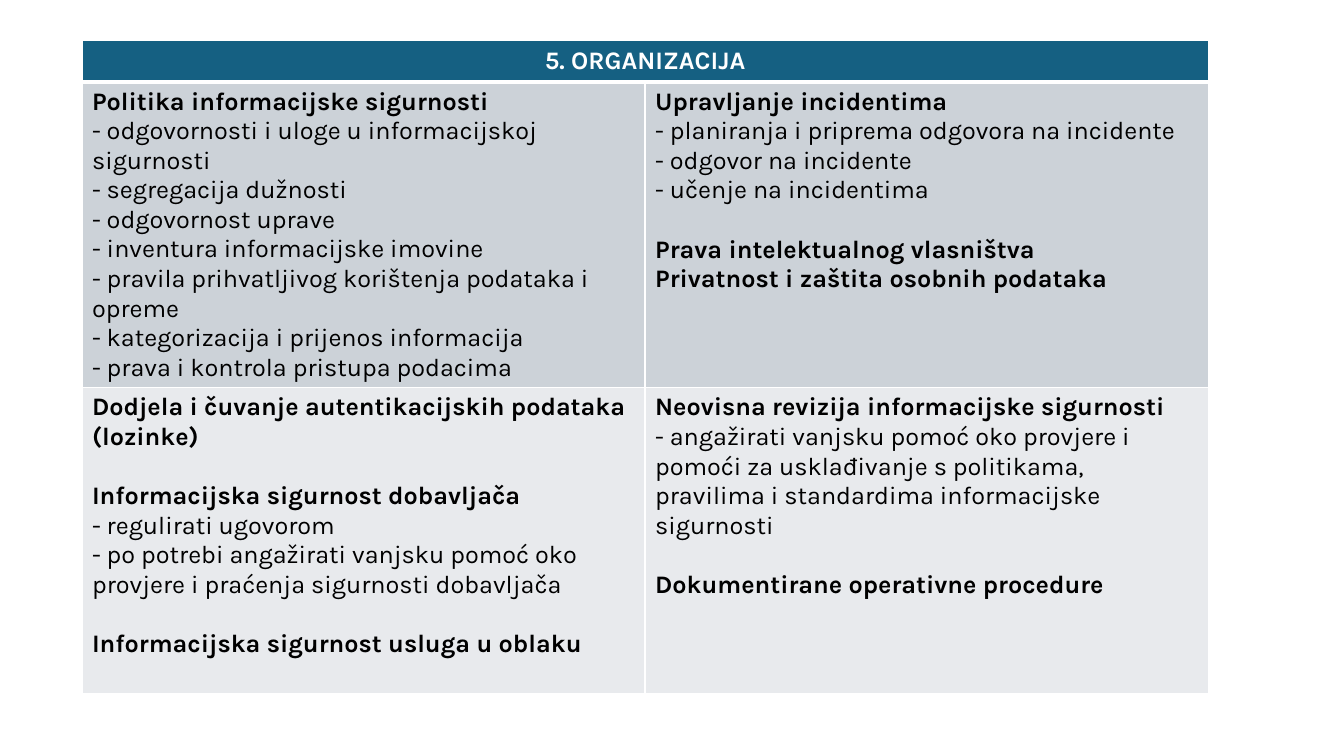
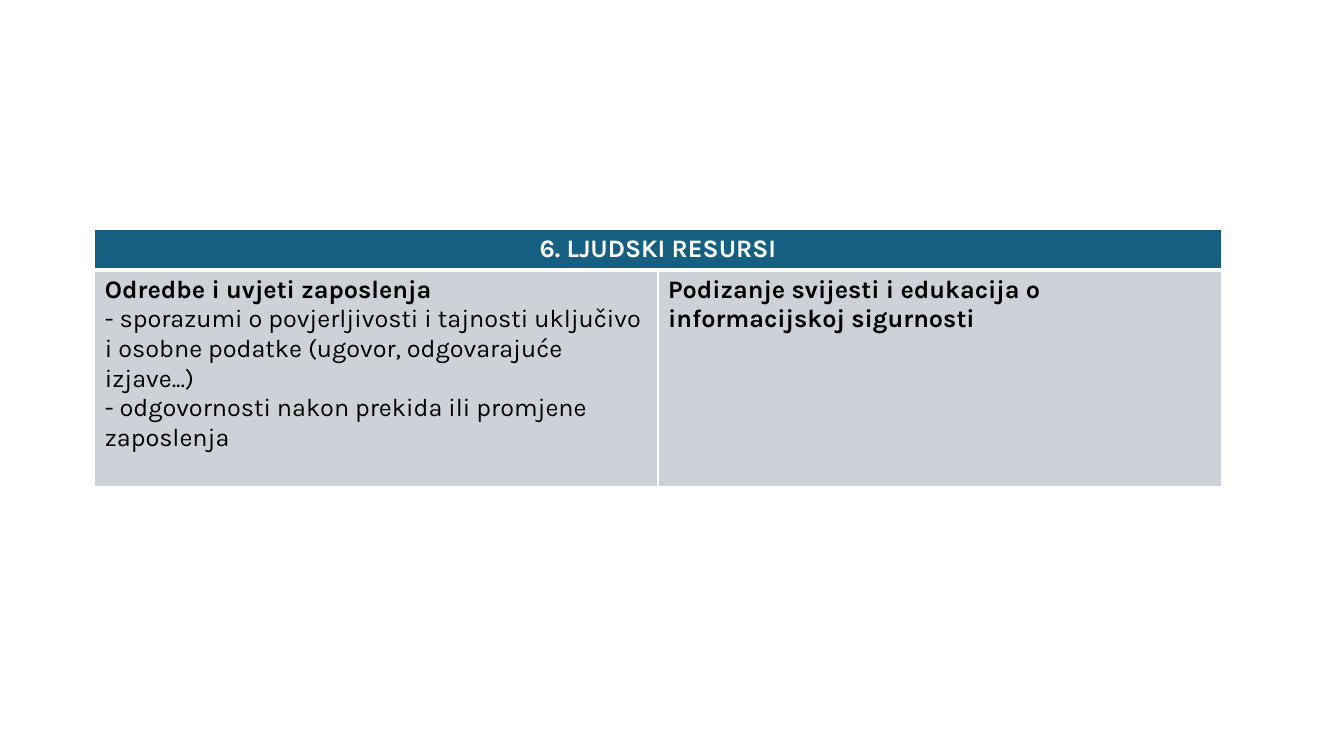
from dataclasses import dataclass

from lxml.etree import SubElement as Sub
from pptx import Presentation
from pptx.dml.color import RGBColor as Color
from pptx.enum.text import PP_ALIGN as Align
from pptx.oxml.ns import qn
from pptx.util import Inches, Pt


@dataclass(frozen=True)
class Theme:
    font: str = "Karla"
    size: float = 18
    group_gap: float = 21.2
    header_fill: str = "156082"
    row_fills: tuple = ("CCD2D8", "E8EAED")
    light: str = "FFFFFF"
    dark: str = "000000"
    thin: float = 1
    thick: float = 3
    table_columns: float = 83.8
    header_rows: float = 5.44


class Deck:
    grid = 100

    def __init__(self, theme):
        self.theme = theme
        self.presentation = Presentation()
        self.presentation.slide_width = Inches(13.33)
        self.presentation.slide_height = Inches(7.5)
        self.slide = None

    def columns(self, count):
        return round(self.presentation.slide_width * count / self.grid)

    def rows(self, count):
        return round(self.presentation.slide_height * count / self.grid)

    def add_slide(self):
        layout = self.presentation.slide_layouts[6]
        self.slide = self.presentation.slides.add_slide(layout)

    def add_text(self, paragraph, text, color, bold):
        run = paragraph.add_run()
        run.text = text
        font_format = {"name": self.theme.font, "size": Pt(self.theme.size), "bold": bold}
        for name, value in font_format.items():
            setattr(run.font, name, value)
        run.font.color.rgb = Color.from_string(color)

    def paint(self, cell, fill, top, bottom):
        thin = self.theme.thin
        properties = cell._tc.get_or_add_tcPr()
        widths = {"a:lnL": thin, "a:lnR": thin, "a:lnT": top, "a:lnB": bottom}
        for tag, width in widths.items():
            line = Sub(properties, qn(tag), w=str(Pt(width)))
            solid = Sub(line, qn("a:solidFill"))
            Sub(solid, qn("a:srgbClr"), val=self.theme.light)
        cell.fill.solid()
        cell.fill.fore_color.rgb = Color.from_string(fill)

    def fill_header(self, table, title):
        for cell in table.rows[0].cells:
            self.paint(cell, self.theme.header_fill, self.theme.thin, self.theme.thick)
        header = table.cell(0, 0)
        header.merge(table.cell(0, len(table.columns) - 1))
        paragraph = header.text_frame.paragraphs[0]
        paragraph.alignment = Align.CENTER
        self.add_text(paragraph, title, self.theme.light, True)

    def fill_body(self, cell, groups):
        frame = cell.text_frame
        paragraph = frame.paragraphs[0]
        for group_index, group in enumerate(groups):
            for line_index, text in enumerate(group):
                if group_index or line_index:
                    paragraph = frame.add_paragraph()
                if group_index and not line_index:
                    paragraph.space_before = Pt(self.theme.group_gap)
                self.add_text(paragraph, text, self.theme.dark, not text.startswith("-"))

    def add_table(self, left, top, body_rows, title, body):
        theme = self.theme
        column_count = len(body[0])
        heights = [theme.header_rows] + [body_rows] * len(body)
        table = self.slide.shapes.add_table(
            len(heights), column_count, self.columns(left), self.rows(top),
            self.columns(theme.table_columns), self.rows(sum(heights))).table
        table.horz_banding = False
        for column in table.columns:
            column.width = self.columns(theme.table_columns / column_count)
        for row, height in zip(table.rows, heights):
            row.height = self.rows(height)
        self.fill_header(table, title)
        for row_index, contents in enumerate(body, start=1):
            fill = theme.row_fills[(row_index - 1) % len(theme.row_fills)]
            top_line = theme.thick if row_index == 1 else theme.thin
            for cell, groups in zip(table.rows[row_index].cells, contents):
                self.paint(cell, fill, top_line, theme.thin)
                self.fill_body(cell, groups)


ORGANISATION = [
    [
        [["Politika informacijske sigurnosti",
          "- odgovornosti i uloge u informacijskoj sigurnosti",
          "- segregacija dužnosti",
          "- odgovornost uprave",
          "- inventura informacijske imovine",
          "- pravila prihvatljivog korištenja podataka i opreme",
          "- kategorizacija i prijenos informacija",
          "- prava i kontrola pristupa podacima"]],
        [["Upravljanje incidentima",
          "- planiranja i priprema odgovora na incidente",
          "- odgovor na incidente",
          "- učenje na incidentima"],
         ["Prava intelektualnog vlasništva",
          "Privatnost i zaštita osobnih podataka"]],
    ],
    [
        [["Dodjela i čuvanje autentikacijskih podataka (lozinke)"],
         ["Informacijska sigurnost dobavljača",
          "- regulirati ugovorom",
          "- po potrebi angažirati vanjsku pomoć oko provjere i praćenja "
          "sigurnosti dobavljača"],
         ["Informacijska sigurnost usluga u oblaku"]],
        [["Neovisna revizija informacijske sigurnosti",
          "- angažirati vanjsku pomoć oko provjere i pomoći za usklađivanje "
          "s politikama, pravilima i standardima informacijske sigurnosti"],
         ["Dokumentirane operativne procedure"]],
    ],
]

PEOPLE = [
    [
        [["Odredbe i uvjeti zaposlenja",
          "- sporazumi o povjerljivosti i tajnosti uključivo i osobne podatke "
          "(ugovor, odgovarajuće izjave...)",
          "- odgovornosti nakon prekida ili promjene zaposlenja"]],
        [["Podizanje svijesti i edukacija o informacijskoj sigurnosti"]],
    ],
]


def main():
    deck = Deck(Theme())
    deck.add_slide()
    deck.add_table(6.1, 5.4, 40.4, "5. ORGANIZACIJA", ORGANISATION)
    deck.add_slide()
    deck.add_table(7.06, 30.3, 28.6, "6. LJUDSKI RESURSI", PEOPLE)
    deck.presentation.save("out.pptx")


if __name__ == "__main__":
    main()
